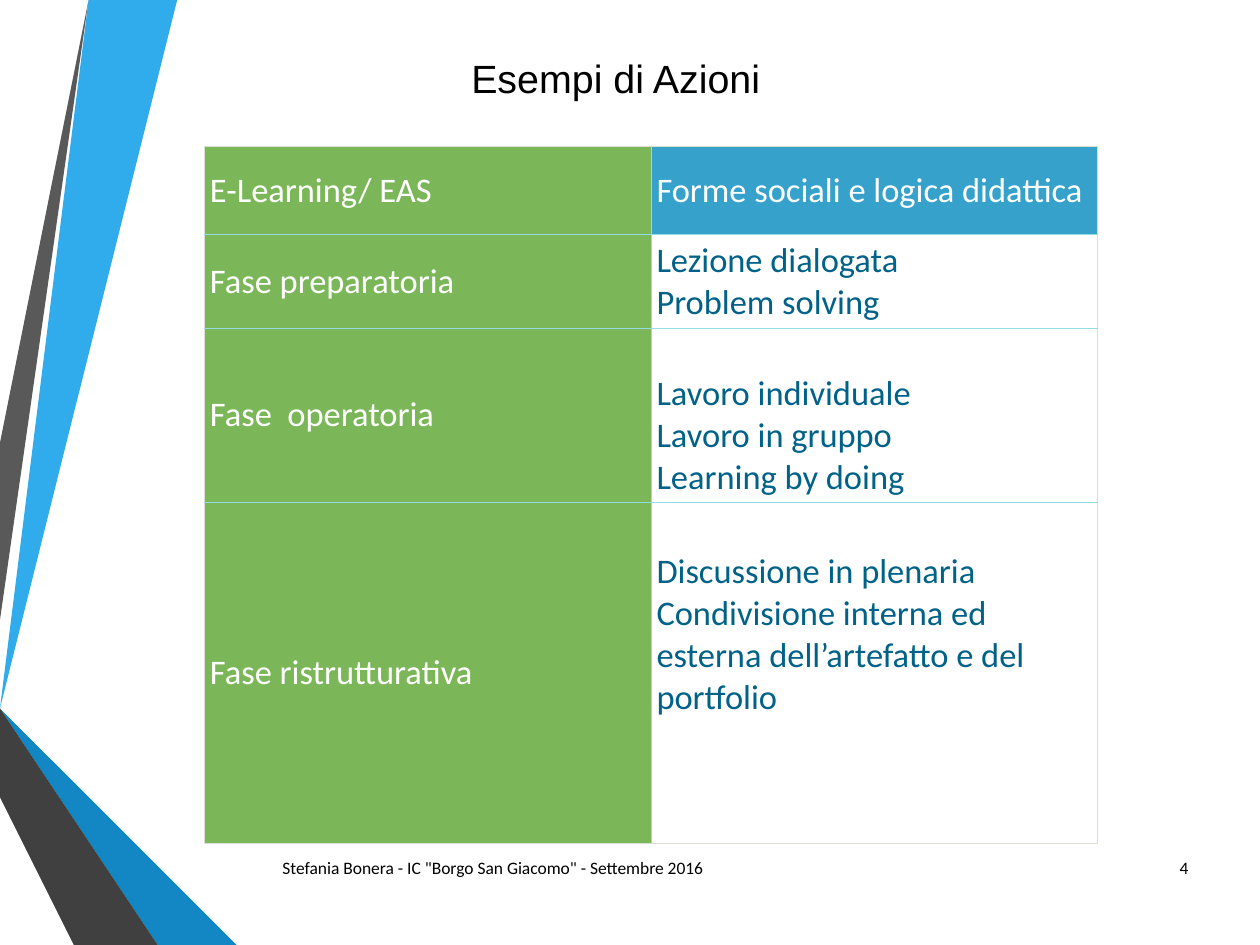
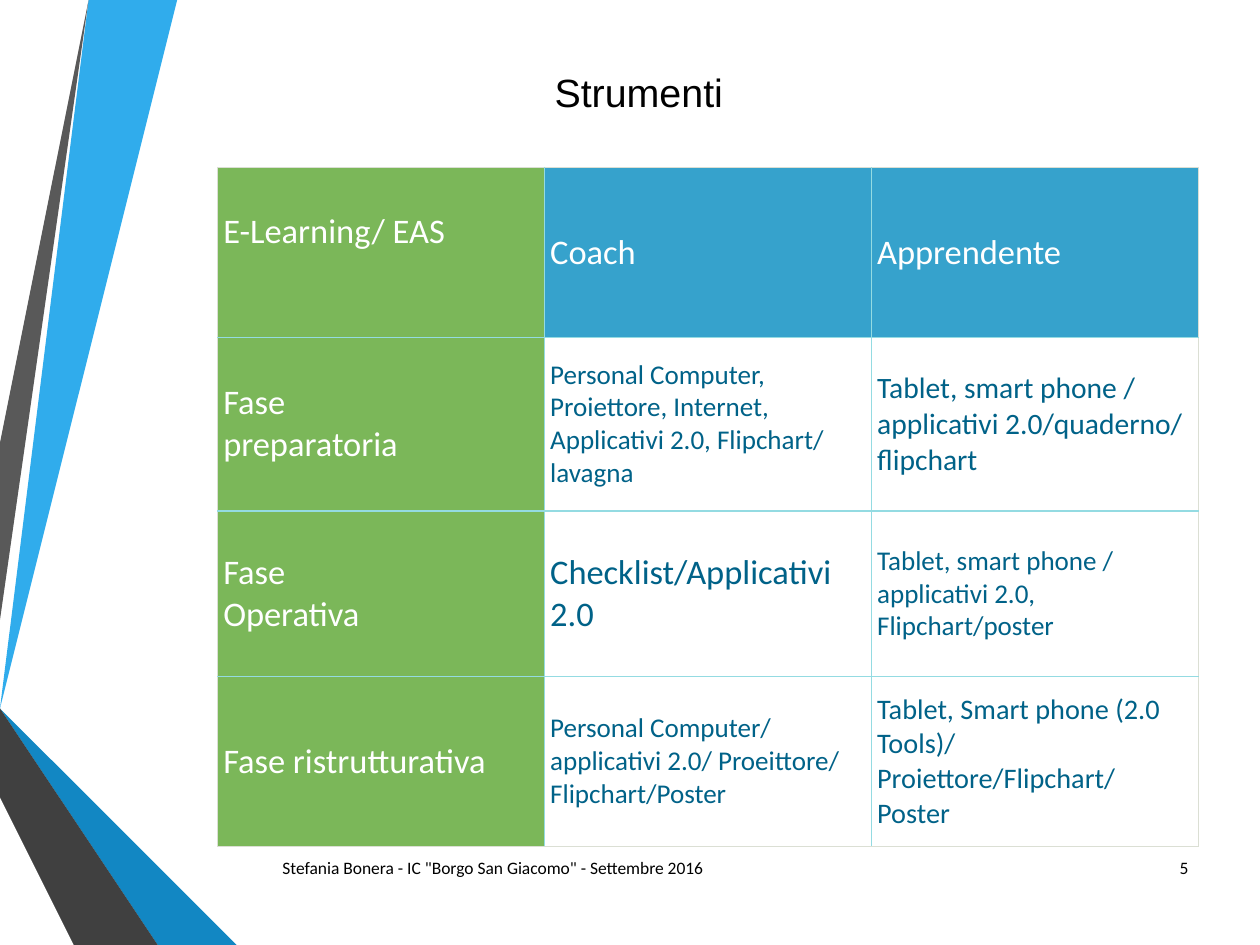
from dataclasses import dataclass

from lxml import etree
from pptx import Presentation
from pptx.dml.color import RGBColor
from pptx.enum.text import MSO_ANCHOR, MSO_AUTO_SIZE, PP_ALIGN
from pptx.oxml.ns import qn
from pptx.slide import Slide
from pptx.table import _Cell
from pptx.util import Inches, Pt

MIDDLE, TOP = MSO_ANCHOR.MIDDLE, MSO_ANCHOR.TOP
LEFT, RIGHT = PP_ALIGN.LEFT, PP_ALIGN.RIGHT
FIT_SHAPE = MSO_AUTO_SIZE.SHAPE_TO_FIT_TEXT

# Shared look
WIDTH, HEIGHT = 14.22, 10.67
BLACK = RGBColor(0x00, 0x00, 0x00)
WHITE = RGBColor(0xFF, 0xFF, 0xFF)
GREEN = RGBColor(0x7B, 0xB7, 0x59)
BLUE = RGBColor(0x21, 0x98, 0xC7)
NAVY = RGBColor(0x00, 0x62, 0x88)
INNER_LINE = RGBColor(0x94, 0xDB, 0xE2)
OUTER_LINE = RGBColor(0xDB, 0xDF, 0xD4)
TITLE_FONT, BODY_FONT = "Arial", "Calibri"
INSET = 0.06
FOOTER = 'Stefania Bonera - IC "Borgo San Giacomo" - Settembre 2016'


@dataclass(frozen=True)
class Band:
    color: RGBColor
    points: tuple[tuple[float, float], ...]


@dataclass(frozen=True)
class Entry:
    text: str
    size: float = 28
    above: float = INSET
    below: float = INSET


@dataclass(frozen=True)
class Grid:
    left: float
    top: float
    column_width: float
    row_heights: tuple[float, ...]
    rows: tuple[tuple[Entry, ...], ...]


@dataclass(frozen=True)
class Page:
    number: int
    title: str
    title_box: tuple[float, float, float, float]
    grid: Grid


BANDS = (
    Band(RGBColor(0x30, 0xAC, 0xEC),
         ((0, 7.73), (0, 8.18), (0.31, 8.23), (1.67, 0), (1.27, 0))),
    Band(RGBColor(0x59, 0x59, 0x59),
         ((1.18, 0), (0.79, 0), (0, 4.79), (0, 7.19))),
    Band(RGBColor(0x26, 0x26, 0x26),
         ((0, 8.81), (0, 8.84), (1.33, HEIGHT), (1.41, HEIGHT))),
    Band(RGBColor(0x0C, 0x5A, 0x82),
         ((0, 8.24), (2.22, HEIGHT), (2.31, HEIGHT))),
    Band(RGBColor(0x12, 0x87, 0xC3),
         ((0, 8.24), (2.31, HEIGHT), (3.32, HEIGHT), (0.31, 8.23), (0, 8.18))),
    Band(RGBColor(0x40, 0x40, 0x40),
         ((0, 8.81), (1.41, HEIGHT), (2.14, HEIGHT), (0, 8.33))),
)

PAGES = (
    Page(4, "Esempi di Azioni", (5.22, 0.56, 3.49, 0.64), Grid(
        2.31, 1.65, 5.04, (1, 1.05, 1.97, 3.85), (
            (Entry("E-Learning/ EAS"),
             Entry("Forme sociali e logica didattica")),
            (Entry("Fase preparatoria"),
             Entry("Lezione dialogata\nProblem solving")),
            (Entry("Fase  operatoria"),
             Entry("Lavoro individuale\nLavoro in gruppo\nLearning by doing",
                   above=0.5)),
            (Entry("Fase ristrutturativa"),
             Entry("Discussione in plenaria\nCondivisione interna ed esterna "
                   "dell’artefatto e del portfolio", above=0.53, below=1.4)),
        ))),
    Page(5, "Strumenti", (6.16, 0.72, 2.12, 0.64), Grid(
        2.46, 1.89, 3.69, (1.92, 1.96, 1.87, 1.92), (
            (Entry("E-Learning/ EAS", below=0.53),
             Entry("Coach"),
             Entry("Apprendente")),
            (Entry("Fase\vpreparatoria"),
             Entry("Personal Computer, Proiettore, Internet, "
                   "Applicativi 2.0, Flipchart/ lavagna", 22),
             Entry("Tablet, smart phone / applicativi 2.0/quaderno/ flipchart", 24)),
            (Entry("Fase\vOperativa"),
             Entry("Checklist/Applicativi 2.0"),
             Entry("Tablet, smart phone / applicativi 2.0, Flipchart/poster", 22)),
            (Entry("Fase ristrutturativa"),
             Entry("Personal Computer/ applicativi 2.0/ Proeittore/ "
                   "Flipchart/Poster", 22),
             Entry("Tablet, Smart phone (2.0 Tools)/ "
                   "Proiettore/Flipchart/ Poster", 23)),
        ))),
)


def style_text(frame, font_name: str, size: float, color: RGBColor,
               align=LEFT) -> None:
    for para in frame.paragraphs:
        para.alignment = align
        for span in para.runs:
            span.font.name = font_name
            span.font.size = Pt(size)
            span.font.color.rgb = color


def add_text(slide: Slide, text: str, area: tuple[float, float, float, float],
             font_name: str, size: float, anchor, align=LEFT,
             wrap: bool = True) -> None:
    box = slide.shapes.add_textbox(*map(Inches, area))
    frame = box.text_frame
    frame.word_wrap = wrap
    frame.vertical_anchor = anchor
    if not wrap:
        frame.auto_size = FIT_SHAPE
    frame.text = text
    style_text(frame, font_name, size, BLACK, align)


def add_band(slide: Slide, band: Band) -> None:
    start, *others = band.points
    builder = slide.shapes.build_freeform(*start, scale=Inches(1))
    builder.add_line_segments(others, close=True)
    shape = builder.convert_to_shape()
    shape.shadow.inherit = False
    shape.fill.solid()
    shape.fill.fore_color.rgb = band.color
    shape.line.fill.background()


def set_borders(cell: _Cell, outer_sides: dict[str, bool]) -> None:
    properties = cell._tc.get_or_add_tcPr()
    for side, outer in outer_sides.items():
        line = etree.SubElement(properties, qn(f"a:{side}"), w=str(Pt(1)))
        fill = etree.SubElement(line, qn("a:solidFill"))
        color = OUTER_LINE if outer else INNER_LINE
        etree.SubElement(fill, qn("a:srgbClr"), val=str(color))


def set_fill(cell: _Cell, color: RGBColor, opacity: int) -> None:
    cell.fill.solid()
    cell.fill.fore_color.rgb = color
    if opacity < 100:
        fill = cell._tc.tcPr.find(qn("a:solidFill"))
        etree.SubElement(fill[0], qn("a:alpha"), val=str(opacity * 1000))


def fill_cell(cell: _Cell, entry: Entry, row: int, column: int) -> None:
    # Green first column, blue header, white body
    if column == 0:
        set_fill(cell, GREEN, 100)
    elif row == 0:
        set_fill(cell, BLUE, 90)
    else:
        set_fill(cell, WHITE, 80)
    cell.vertical_anchor = MIDDLE
    cell.margin_left = cell.margin_right = Inches(INSET)
    cell.margin_top, cell.margin_bottom = Inches(entry.above), Inches(entry.below)
    cell.text_frame.text = entry.text
    text_color = WHITE if row == 0 or column == 0 else NAVY
    style_text(cell.text_frame, BODY_FONT, entry.size, text_color)


def add_grid(slide: Slide, grid: Grid) -> None:
    row_count, column_count = len(grid.rows), len(grid.rows[0])
    table = slide.shapes.add_table(
        row_count, column_count, Inches(grid.left), Inches(grid.top),
        Inches(grid.column_width * column_count),
        Inches(sum(grid.row_heights))).table
    table.first_row = table.horz_banding = False
    for column in table.columns:
        column.width = Inches(grid.column_width)
    for row, height in zip(table.rows, grid.row_heights):
        row.height = Inches(height)
    for row, entries in enumerate(grid.rows):
        for column, entry in enumerate(entries):
            cell = table.cell(row, column)
            set_borders(cell, {"lnL": column == 0,
                               "lnR": column == column_count - 1,
                               "lnT": row == 0,
                               "lnB": row == row_count - 1})
            fill_cell(cell, entry, row, column)


def add_page(deck, page: Page) -> None:
    slide = deck.slides.add_slide(deck.slide_layouts[6])
    for band in BANDS:
        add_band(slide, band)
    # Footer and page number
    add_text(slide, FOOTER, (3.09, 9.51, 8.27, 0.57), BODY_FONT, 14.2, MIDDLE)
    add_text(slide, str(page.number), (12.87, 9.51, 0.64, 0.57),
             BODY_FONT, 14.2, MIDDLE, RIGHT)
    # Title and table
    add_text(slide, page.title, page.title_box, TITLE_FONT, 32, TOP, wrap=False)
    add_grid(slide, page.grid)


def main() -> None:
    deck = Presentation()
    deck.slide_width, deck.slide_height = Inches(WIDTH), Inches(HEIGHT)
    for page in PAGES:
        add_page(deck, page)
    deck.save("out.pptx")


if __name__ == "__main__":
    main()
